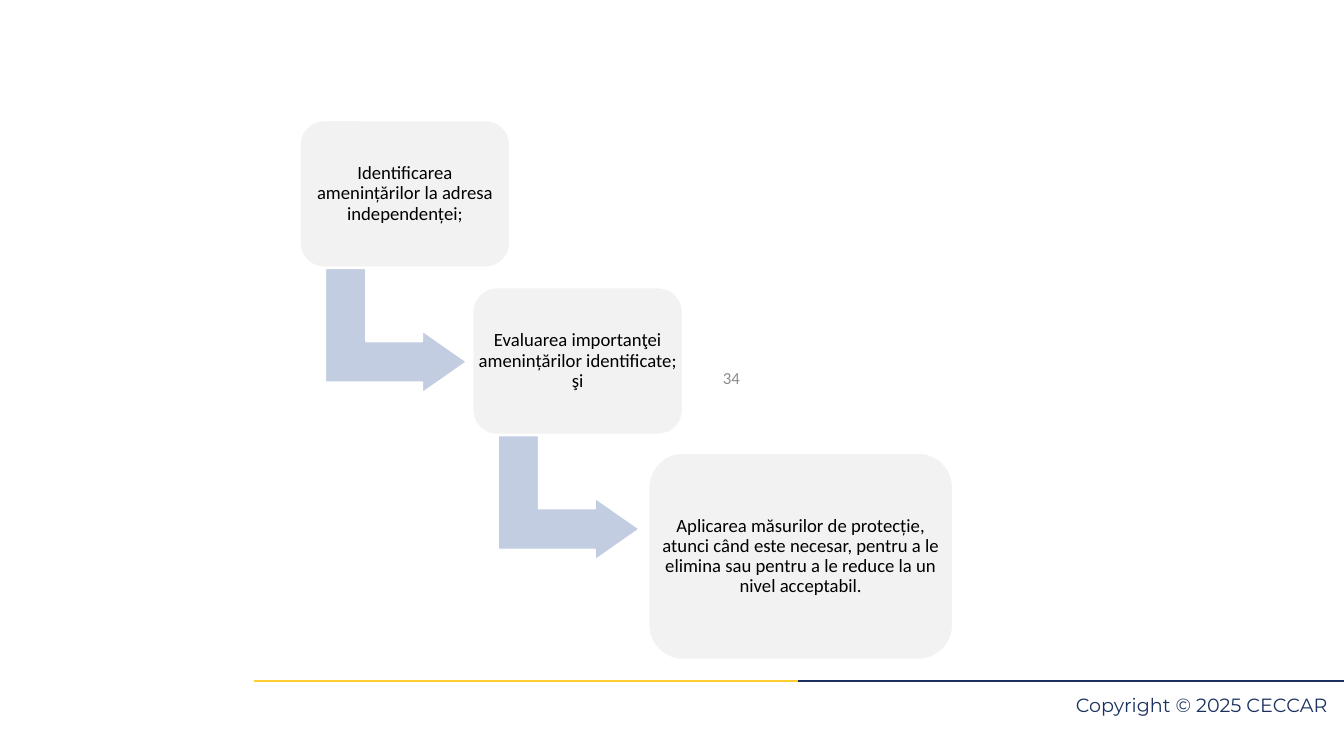
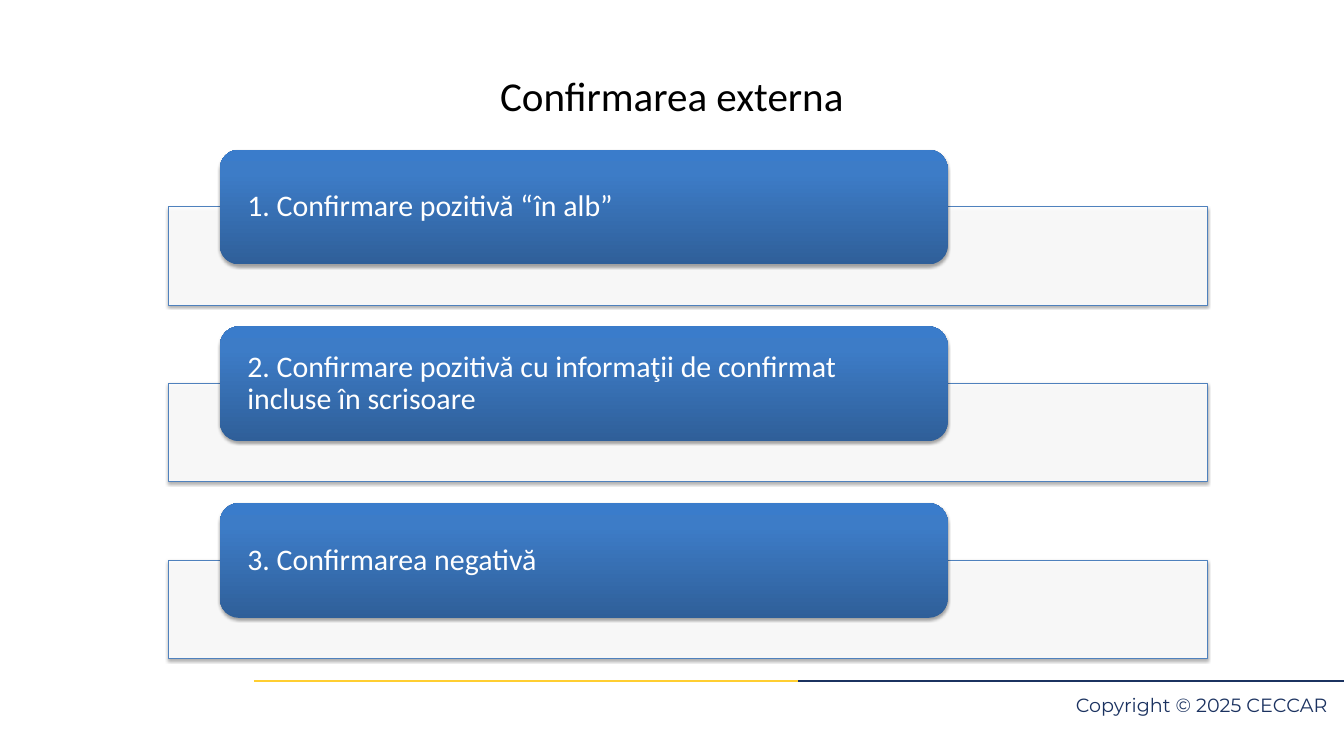
from lxml import etree
from pptx import Presentation
from pptx import util as u
from pptx.dml.color import RGBColor
from pptx.enum import shapes, text
from pptx.oxml import ns

Cm, Pt = u.Cm, u.Pt
WIDTH, HEIGHT = 50.8, 28.58
NAVY = RGBColor(0x1B, 0x32, 0x60)
GOLD = RGBColor(0xFF, 0xCE, 0x31)
GREY = RGBColor(0x8C, 0x8C, 0x8C)
PALE = RGBColor(0xF2, 0xF2, 0xF2)
MIST = RGBColor(0xC2, 0xCD, 0xE1)
EDGE = RGBColor(0x4F, 0x81, 0xBD)
WHITE = RGBColor(0xFF, 0xFF, 0xFF)
BLACK = RGBColor(0, 0, 0)
BLUES = (
    (0, RGBColor(0x2F, 0x5F, 0x99)),
    (80, RGBColor(0x3D, 0x7C, 0xC7)),
    (100, RGBColor(0x3A, 0x7C, 0xCB)),
)
LEFT, MID, RIGHT = text.PP_ALIGN.LEFT, text.PP_ALIGN.CENTER, text.PP_ALIGN.RIGHT
ROUND = shapes.MSO_SHAPE.ROUNDED_RECTANGLE
STEPS = (
    ("Identificarea amenințărilor la adresa independenței;", (11.33, 4.55, 7.95, 5.56)),
    ("Evaluarea importanţei amenințărilor identificate; şi", (17.86, 10.87, 7.95, 5.56)),
    ("Aplicarea măsurilor de protecție, atunci când este necesar, pentru a le "
     "elimina sau pentru a le reduce la un nivel acceptabil.", (24.51, 17.12, 11.51, 7.82)),
)
KINDS = (
    "1. Confirmare pozitivă “în alb”",
    "2. Confirmare pozitivă cu informaţii de confirmat incluse în scrisoare",
    "3. Confirmarea negativă",
)


def write(slide, words, box, size=20, color=BLACK, font="Calibri", align=MID,
          pads=(0.2, 0.2), space=0.9, anchor=text.MSO_ANCHOR.MIDDLE):
    """Add a text box with one formatted paragraph."""
    frame = slide.shapes.add_textbox(*map(Cm, box)).text_frame
    frame.word_wrap = True
    frame.vertical_anchor = anchor
    frame.margin_left = frame.margin_right = Cm(pads[0])
    frame.margin_top = frame.margin_bottom = Cm(pads[1])
    para = frame.paragraphs[0]
    para.alignment, para.line_spacing = align, space
    run = para.add_run()
    run.text = words
    run.font.name, run.font.size, run.font.color.rgb = font, Pt(size), color


def draw(slide, kind, box, fill=None, line=None, weight=2):
    """Add a preset shape without a shadow."""
    shape = slide.shapes.add_shape(kind, *map(Cm, box))
    shape.shadow.inherit = False
    if fill is not None:
        shape.fill.solid()
        shape.fill.fore_color.rgb = fill
    if line is None:
        shape.line.fill.background()
    else:
        shape.line.color.rgb = line
        shape.line.width = Pt(weight)
    return shape


def tag(parent, name, **attrs):
    """Append a drawing element with the given attributes."""
    pairs = {key: str(val) for key, val in attrs.items()}
    return etree.SubElement(parent, ns.qn("a:" + name), pairs)


def shade(shape):
    """Give a shape a soft shadow below it."""
    effects = shape.element.spPr.find(ns.qn("a:effectLst"))
    outer = tag(effects, "outerShdw", blurRad=Pt(3.1), dist=Pt(1.8),
                dir=5400000, rotWithShape=0)
    tag(tag(outer, "srgbClr", val=BLACK), "alpha", val=35000)


def blend(shape):
    """Fill a shape with blues that run from bottom to top."""
    shape.fill.gradient()
    shape.fill.gradient_angle = 90
    stops = next(shape.element.spPr.iter(ns.qn("a:gsLst")))
    for stop in list(stops):
        stops.remove(stop)
    for pos, color in BLUES:
        tag(tag(stops, "gs", pos=pos * 1000), "srgbClr", val=color)


def footer(slide):
    """Add the two-coloured rule and the copyright line."""
    top, split = 25.76, 30.18
    for start, end, color in ((split, WIDTH, NAVY), (9.6, split, GOLD)):
        rule = slide.shapes.add_connector(
            shapes.MSO_CONNECTOR.STRAIGHT, Cm(start), Cm(top), Cm(end), Cm(top))
        rule.line.color.rgb, rule.line.width = color, Pt(2.25)
        tag(rule.element.spPr, "effectLst")
    write(slide, "Copyright © 2025 CECCAR ", (36.2, top + 0.58, 14.17, 0.76),
          size=20.5, color=NAVY, font="Montserrat", align=RIGHT, pads=(0, 0),
          space=Pt(20.5), anchor=text.MSO_ANCHOR.TOP)


def step(slide, words, box, more):
    """Add one stair, with a bent arrow if another follows."""
    left, top = box[:2]
    if more:
        arrow = draw(slide, shapes.MSO_SHAPE.BENT_UP_ARROW,
                     (left + 1.28, top + 5.27, 4.72, 5.36), MIST, WHITE)
        arrow.rotation = 90
        for i, value in enumerate((0.328, 0.25, 0.358)):
            arrow.adjustments[i] = value
    draw(slide, ROUND, box, PALE, WHITE)
    write(slide, words, box)


def stairs(slide):
    """Build the slide of descending steps."""
    write(slide, "34", (22.43, 13.79, 5.92, 1.02), size=18, color=GREY,
          align=RIGHT, pads=(0.38, 0.18), space=1)
    for i, (words, box) in enumerate(STEPS):
        step(slide, words, box, i < len(STEPS) - 1)


def band(slide, words, left, top):
    """Add a pale bar with a blue label over its upper edge."""
    bar = draw(slide, shapes.MSO_SHAPE.RECTANGLE,
               (left, top + 2.16, 39.29, 3.71), WHITE, EDGE, 0.75)
    tag(next(bar.element.spPr.iter(ns.qn("a:srgbClr"))), "alpha", val=90000)
    shade(bar)
    box = (left + 1.96, top, 27.51, 4.34)
    pill = draw(slide, ROUND, box)
    blend(pill)
    shade(pill)
    write(slide, words, box, size=32, color=WHITE, align=LEFT, pads=(1.04, 0))


def bands(slide):
    """Build the slide that lists the kinds of confirmation."""
    write(slide, "Confirmarea externa", (1.17, 2, 48.46, 3.18), size=44,
          pads=(0.25, 0.13), space=1)
    for i, words in enumerate(KINDS):
        band(slide, words, 6.35, 5.66 + 6.68 * i)


def main():
    """Build and save the deck."""
    deck = Presentation()
    deck.slide_width, deck.slide_height = Cm(WIDTH), Cm(HEIGHT)
    for build in (stairs, bands):
        slide = deck.slides.add_slide(deck.slide_layouts[6])
        footer(slide)
        build(slide)
    deck.save("out.pptx")


if __name__ == "__main__":
    main()
